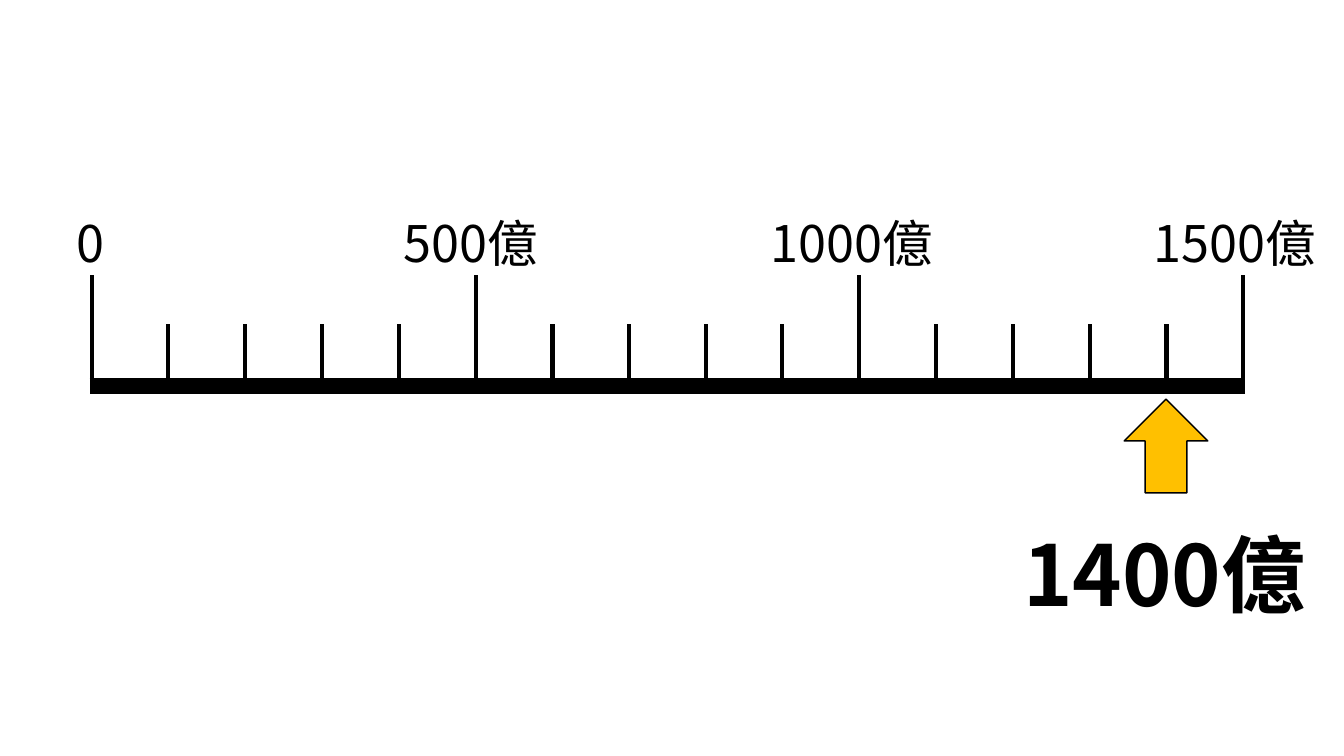
from dataclasses import dataclass

from lxml import etree
from pptx import Presentation
from pptx.dml.color import RGBColor
from pptx.enum import shapes, text
from pptx.oxml import ns
from pptx import util as u

PX = 9144  # EMU per px, 100 px to the inch


@dataclass(frozen=True)
class Theme:
    font: str = "Noto Sans CJK JP"
    ink: RGBColor = RGBColor(0, 0, 0)
    marker: RGBColor = RGBColor(0xFF, 0xC0, 0x00)
    label_size: int = 36
    answer_size: int = 60
    axis_weight: int = 12
    tick_weight: int = 3
    outline_weight: int = 1


THEME = Theme()

# Number line geometry
AXIS_Y = 383
FIRST_TICK, LAST_TICK = 91, 1233
DIVISIONS, MAJOR_EVERY = 15, 5
MAJOR_TOP, MINOR_TOP = 273, 321
LABEL_TOP, LABEL_HEIGHT = 206, 71

# Text, left, width, wraps
SCALE_LABELS = [
    ("0", 66, 52, False),
    ("500億", 390, 164, True),
    ("1000億", 754, 196, True),
    ("1500億", 1134, 196, False),
]


def px(*lengths):
    return [u.Emu(length * PX) for length in lengths]


def add_line(slide, start, end, weight):
    line = slide.shapes.add_connector(
        shapes.MSO_CONNECTOR.STRAIGHT, *px(*start, *end))
    line.line.color.rgb = THEME.ink
    line.line.width = u.Pt(weight)
    etree.SubElement(line._element.spPr, ns.qn("a:effectLst"))


def add_label(slide, wording, box, size, wraps=False, bold=False):
    frame = slide.shapes.add_textbox(*px(*box)).text_frame
    frame.word_wrap = wraps
    frame.auto_size = text.MSO_AUTO_SIZE.SHAPE_TO_FIT_TEXT
    run = frame.paragraphs[0].add_run()
    run.text = wording
    run.font.name = THEME.font
    run.font.size = u.Pt(size)
    run.font.bold = bold
    run.font.color.rgb = THEME.ink
    east_asian = etree.SubElement(run.font._element, ns.qn("a:ea"))
    east_asian.set("typeface", THEME.font)


def add_ticks(slide):
    for i in range(DIVISIONS + 1):
        x = round(FIRST_TICK + i * (LAST_TICK - FIRST_TICK) / DIVISIONS)
        top = MINOR_TOP if i % MAJOR_EVERY else MAJOR_TOP
        add_line(slide, (x, AXIS_Y), (x, top), THEME.tick_weight)


def add_marker(slide, box):
    arrow = slide.shapes.add_shape(shapes.MSO_SHAPE.UP_ARROW, *px(*box))
    arrow.shadow.inherit = False
    arrow.fill.solid()
    arrow.fill.fore_color.rgb = THEME.marker
    arrow.line.color.rgb = THEME.ink
    arrow.line.width = u.Pt(THEME.outline_weight)


def main():
    prs = Presentation()
    prs.slide_width, prs.slide_height = px(1333, 750)
    slide = prs.slides.add_slide(prs.slide_layouts[6])

    # Number line
    add_line(slide, (89, AXIS_Y), (1235, AXIS_Y), THEME.axis_weight)
    add_ticks(slide)

    # Scale labels
    for wording, left, width, wraps in SCALE_LABELS:
        add_label(slide, wording, (left, LABEL_TOP, width, LABEL_HEIGHT),
                  THEME.label_size, wraps)

    # Marked value
    add_label(slide, "1400億", (1005, 513, 332, 111),
              THEME.answer_size, bold=True)
    add_marker(slide, (1115, 396, 83, 93))

    prs.save("out.pptx")


if __name__ == "__main__":
    main()
